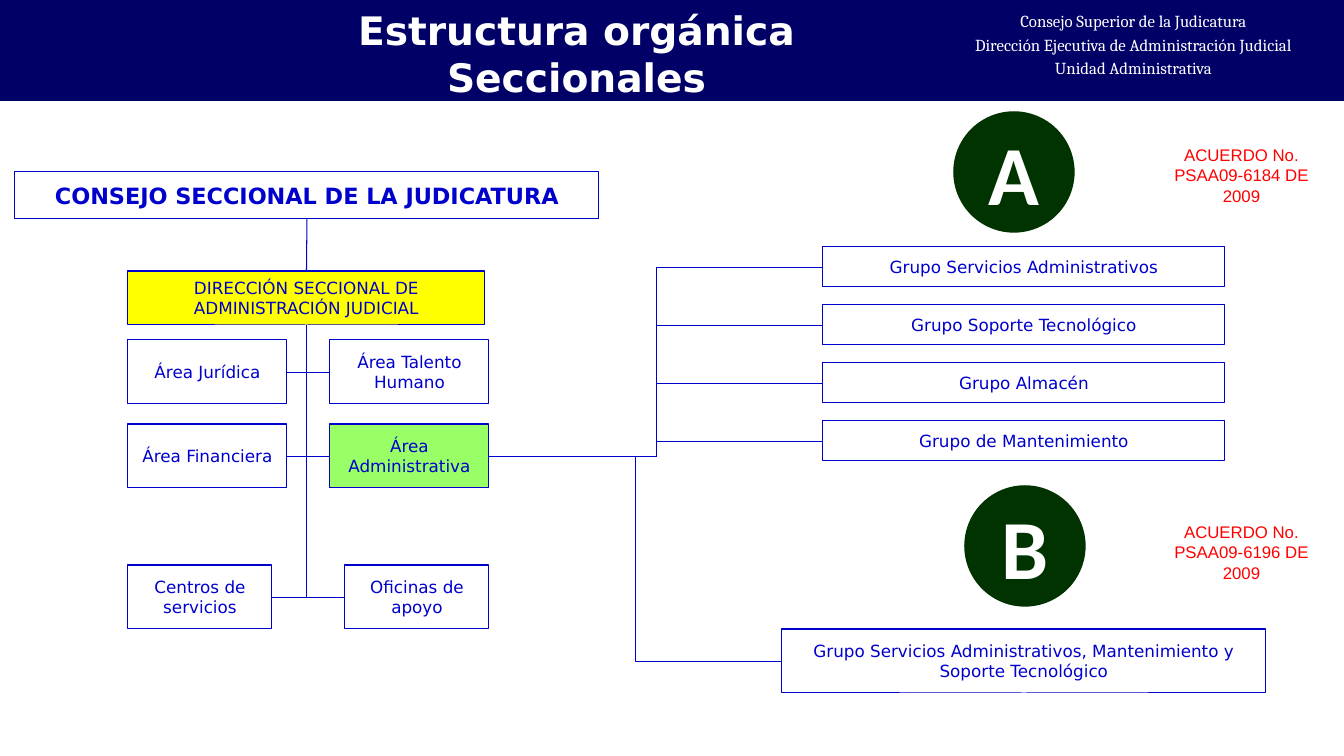
from lxml.etree import SubElement
from pptx import Presentation
from pptx.dml.color import RGBColor
from pptx.enum.shapes import MSO_CONNECTOR as LINK, MSO_SHAPE as SHAPE
from pptx.enum.text import MSO_ANCHOR as ANCHOR, MSO_AUTO_SIZE as FIT, PP_ALIGN as ALIGN
from pptx.oxml.ns import qn
from pptx.util import Pt

PX = 914400 / 100.8
THEME = {
    "navy": RGBColor(0, 0, 0x66), "blue": RGBColor(0, 0, 0xCC),
    "yellow": RGBColor(0xFF, 0xFF, 0), "lime": RGBColor(0x99, 0xFF, 0x66),
    "green": RGBColor(0, 0x33, 0), "red": RGBColor(0xFF, 0, 0),
    "white": RGBColor(0xFF, 0xFF, 0xFF),
    # Type styles: font, size, bold, colour
    "title": ("DejaVu Sans", 28, True, "white"),
    "header": ("Cambria", 12, False, "white"),
    "lead": ("DejaVu Sans", 16, True, "blue"),
    "unit": ("DejaVu Sans", 12, False, "blue"),
    "note": ("Arial", 12, False, "red"),
    "badge": ("Calibri", 60, True, "white"),
}


def write(shape, lines, style, wrap=True, anchor=ANCHOR.TOP, margin=None, before=0):
    name, size, bold, color = THEME[style]
    frame = shape.text_frame
    settings = {"word_wrap": wrap, "auto_size": FIT.NONE, "vertical_anchor": anchor}
    if margin is not None:
        settings |= {f"margin_{side}": round(margin * PX)
                     for side in ("left", "top", "right", "bottom")}
    for key, value in settings.items():
        setattr(frame, key, value)
    frame.text = "\n".join(lines)
    for para in frame.paragraphs:
        para.alignment, para.space_before = ALIGN.CENTER, Pt(before)
        font = para.runs[0].font
        for key, value in {"name": name, "size": Pt(size), "bold": bold}.items():
            setattr(font, key, value)
        font.color.rgb = THEME[color]


def add_box(place, text="", style="unit", fill=None, line="blue", width=0.75, kind=SHAPE.RECTANGLE):
    box = page.shapes.add_shape(kind, *(round(n * PX) for n in place))
    box.shadow.inherit = False
    if fill:
        box.fill.solid()
        box.fill.fore_color.rgb = THEME[fill]
    else:
        box.fill.background()
    if line:
        box.line.color.rgb, box.line.width = THEME[line], Pt(width)
    else:
        box.line.fill.background()
    if text:
        write(box, [text], style, anchor=ANCHOR.MIDDLE, margin=4)
    return box


deck = Presentation()
deck.slide_width, deck.slide_height = round(1344 * PX), round(756 * PX)
page = deck.slides.add_slide(deck.slide_layouts[5])

# Header band and title
band = add_box((0, 0, 1344, 101), fill="navy", line=None)
title = page.shapes.title
band.element.addnext(title.element)
for key, value in {"left": 276, "top": 1, "width": 601, "height": 105}.items():
    setattr(title, key, round(value * PX))
write(title, ["Estructura orgánica", "Seccionales"], "title")
header = page.shapes.add_textbox(*(round(n * PX) for n in (945, 6, 377, 83)))
write(header, ["Consejo Superior de la Judicatura",
               "Dirección Ejecutiva de Administración Judicial",
               "Unidad Administrativa"], "header", wrap=False, before=2.4)

# Council, directorate and their areas
council = add_box((15, 172, 584, 47), "CONSEJO SECCIONAL DE LA JUDICATURA", "lead")
directorate = add_box((128, 271, 357, 54), "DIRECCIÓN SECCIONAL DE ADMINISTRACIÓN JUDICIAL",
                      fill="yellow")
TOP, LEFT, BOTTOM, RIGHT = range(4)
links = [(council, BOTTOM, directorate, TOP, "line", 0.75)]
AREAS = [
    (340, 159, "Área Jurídica", "Área Talento Humano"),
    (424, 159, "Área Financiera", "Área Administrativa"),
    (565, 144, "Centros de servicios", "Oficinas de apoyo"),
]
for top, width, *names in AREAS:
    for name, left, side in zip(names, (128, 489 - width), (RIGHT, LEFT)):
        is_admin = name == "Área Administrativa"
        area = add_box((left, top, width, 64), name, fill="lime" if is_admin else None)
        links.append((area, side, directorate, BOTTOM, "bentConnector2", 0.5))
        if is_admin:
            admin = area

# Groups under options A and B
GROUPS = ["Grupo Servicios Administrativos", "Grupo Soporte Tecnológico",
          "Grupo Almacén", "Grupo de Mantenimiento"]
groups = [add_box((823, 247 + 58 * row, 402, 40), name) for row, name in enumerate(GROUPS)]
groups.append(add_box((782, 629, 484, 64),
                      "Grupo Servicios Administrativos, Mantenimiento y Soporte Tecnológico"))
links += [(admin, RIGHT, group, LEFT, "bentConnector3", 0.5) for group in groups]

# Badges and agreement notes
OPTIONS = [("A", 954, 112, 140, "PSAA09-6184"), ("B", 965, 486, 517, "PSAA09-6196")]
for letter, left, top, note_top, number in OPTIONS:
    add_box((left, top, 120, 120), letter, "badge", "green", "green", 1, SHAPE.OVAL)
    note = page.shapes.add_textbox(*(round(n * PX) for n in (1155, note_top, 173, 72)))
    write(note, [f"ACUERDO No. {number} DE 2009"], "note")

# Connectors glued to the boxes
for start, start_site, end, end_site, route, width in links:
    kind = LINK.STRAIGHT if route == "line" else LINK.ELBOW
    link = page.shapes.add_connector(kind, 0, 0, 0, 0)
    link.begin_connect(start, start_site)
    link.end_connect(end, end_site)
    link.line.color.rgb, link.line.width = THEME["blue"], Pt(width)
    properties = link.element.spPr
    properties.find(qn("a:prstGeom")).set("prst", route)
    SubElement(properties, qn("a:effectLst"))

deck.save("out.pptx")
